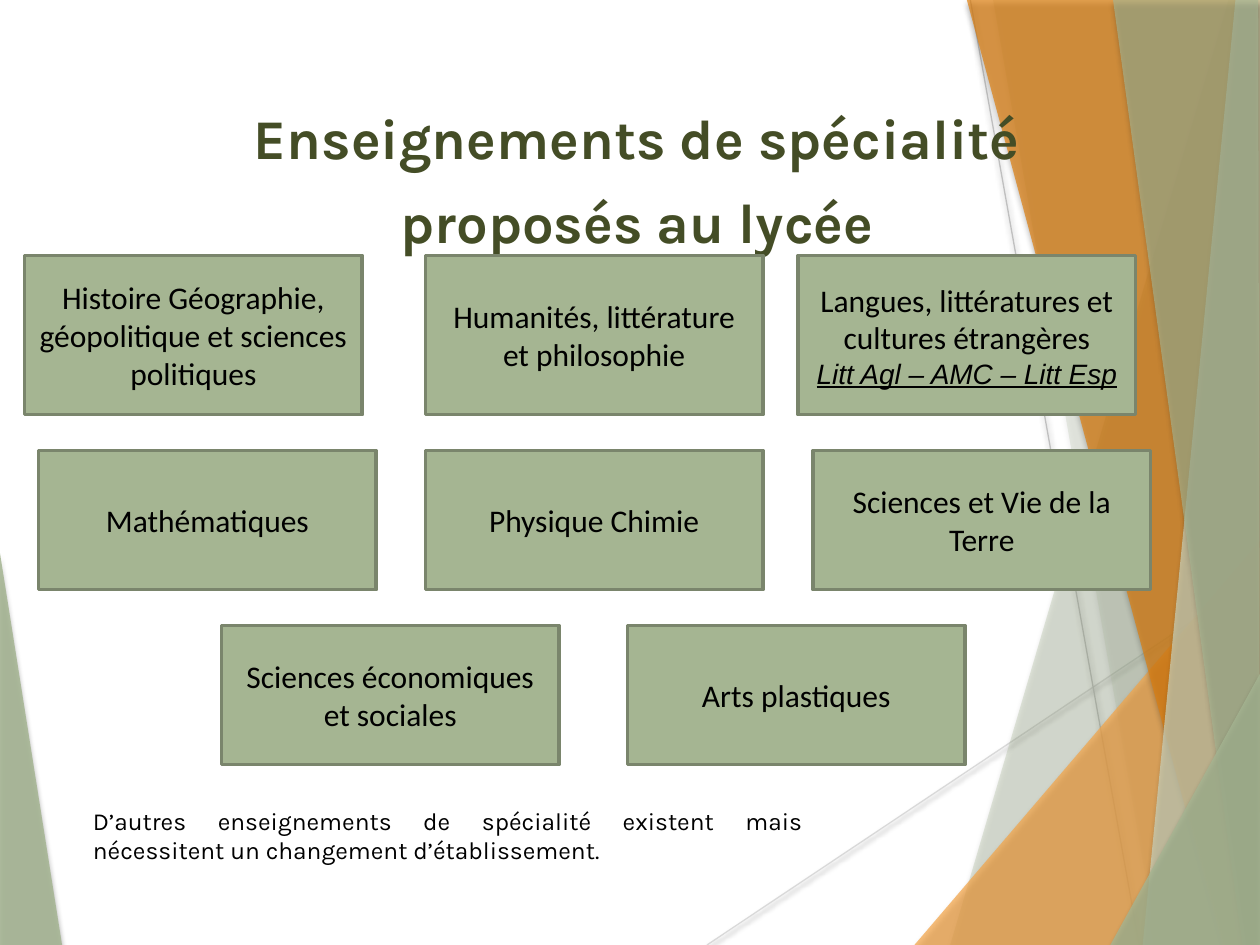
from lxml import etree
from pptx import Presentation
from pptx.dml.color import RGBColor
from pptx.enum import shapes, text
from pptx.oxml import ns
from pptx.util import Pt

SAGE = RGBColor(0xA5, 0xB5, 0x92)
PALE_SAGE = RGBColor(0xC9, 0xD3, 0xBE)
DARK_SAGE = RGBColor(0x7A, 0x85, 0x6C)
APRICOT = RGBColor(0xF3, 0xA4, 0x47)
ORANGE = RGBColor(0xDD, 0x7E, 0x0E)
OLIVE = RGBColor(0x44, 0x4D, 0x26)
LIGHT_GREY = RGBColor(0xD9, 0xD9, 0xD9)
GREY = RGBColor(0xBF, 0xBF, 0xBF)
BLACK = RGBColor(0, 0, 0)

WIDTH, HEIGHT = 720, 540


def add_shadow(shape, opacity, blur, distance):
    """Give the shape a black shadow that falls straight down."""
    effects = etree.SubElement(shape._element.spPr, ns.qn("a:effectLst"))
    shadow = etree.SubElement(effects, ns.qn("a:outerShdw"), blurRad=str(Pt(blur)),
                              dist=str(Pt(distance)), dir="5400000", rotWithShape="0")
    color = etree.SubElement(shadow, ns.qn("a:srgbClr"), val="000000")
    etree.SubElement(color, ns.qn("a:alpha"), val=str(opacity * 1000))


def style_runs(paragraph, name, size, color):
    for span in paragraph.runs:
        span.font.name = name
        span.font.size = Pt(size)
        span.font.color.rgb = color


deck = Presentation()
deck.slide_width, deck.slide_height = Pt(WIDTH), Pt(HEIGHT)
page = deck.slides.add_slide(deck.slide_layouts[5])

# Background lines and translucent facets
for start, end, color in [((404, HEIGHT), (WIDTH, 329), LIGHT_GREY),
                          ((554.5, 0), (651, HEIGHT), GREY)]:
    line = page.shapes.add_connector(shapes.MSO_CONNECTOR.STRAIGHT,
                                     *[Pt(value) for value in start + end])
    line.line.color.rgb = color
    line.line.width = Pt(0.75)
    add_shadow(line, 38, 3.1, 1.6)

facets = [
    (SAGE, 85, [(0, 316), (35.5, HEIGHT), (0, HEIGHT)]),
    (SAGE, 30, [(702, 0), (543, HEIGHT), (WIDTH, HEIGHT), (WIDTH, 0)]),
    (SAGE, 20, [(567.5, 0), (661.5, HEIGHT), (WIDTH, HEIGHT), (WIDTH, 0)]),
    (APRICOT, 72, [(522.5, HEIGHT), (WIDTH, 309), (WIDTH, HEIGHT)]),
    (ORANGE, 70, [(552.5, 0), (698.5, HEIGHT), (WIDTH, HEIGHT), (WIDTH, 0)]),
    (PALE_SAGE, 70, [(706, 0), (653, HEIGHT), (WIDTH, HEIGHT), (WIDTH, 0)]),
    (SAGE, 65, [(636, 0), (710, HEIGHT), (WIDTH, HEIGHT), (719, 0)]),
    (SAGE, 80, [(634.5, HEIGHT), (WIDTH, 385), (WIDTH, HEIGHT)]),
]
for color, opacity, corners in facets:
    points = [(Pt(x), Pt(y)) for x, y in corners]
    builder = page.shapes.build_freeform(*points[0])
    builder.add_line_segments(points[1:], close=True)
    facet = builder.convert_to_shape()
    facet.fill.solid()
    facet.fill.fore_color.rgb = color
    fill_color = facet._element.spPr.find(".//" + ns.qn("a:srgbClr"))
    etree.SubElement(fill_color, ns.qn("a:alpha"), val=str(opacity * 1000))
    facet.line.fill.background()
    add_shadow(facet, 35, 3, 2)

# Title, brought in front of the facets
title = page.shapes.title
page.shapes._spTree.append(title._element)
title.left, title.top, title.width, title.height = Pt(19), Pt(59), Pt(600), Pt(90)
frame = title.text_frame
frame.text = "Enseignements de spécialité\nproposés au lycée"
frame.auto_size = text.MSO_AUTO_SIZE.NONE
frame.vertical_anchor = text.MSO_ANCHOR.TOP
frame.margin_left = frame.margin_right = frame.margin_top = frame.margin_bottom = 0
frame.paragraphs[0]._p.get_or_add_pPr().set("marL", str(Pt(90)))
frame.paragraphs[1].space_before = Pt(10)
for paragraph in frame.paragraphs:
    paragraph.alignment = text.PP_ALIGN.CENTER
    style_runs(paragraph, "Karla", 32, OLIVE)
    paragraph.runs[0].font.bold = True

# Subject boxes: top, height, then left and wording of each box
LANGUAGE_OPTIONS = "Litt Agl – AMC – Litt Esp"
subject_rows = [
    (146, 91, [(14, "Histoire Géographie, géopolitique et sciences politiques"),
               (243, "Humanités, littérature et philosophie"),
               (456, "Langues, littératures et\ncultures étrangères\n" + LANGUAGE_OPTIONS)]),
    (257.5, 79.5, [(22, "Mathématiques"),
                   (243, "Physique Chimie"),
                   (464.5, "Sciences et Vie de la Terre")]),
    (357.5, 79.5, [(126.5, "Sciences économiques\net sociales"),
                   (358.5, "Arts plastiques")]),
]
for top, height, subjects in subject_rows:
    for left, wording in subjects:
        box = page.shapes.add_shape(shapes.MSO_SHAPE.RECTANGLE,
                                    Pt(left), Pt(top), Pt(193), Pt(height))
        box.shadow.inherit = False
        box.fill.solid()
        box.fill.fore_color.rgb = SAGE
        box.line.color.rgb = DARK_SAGE
        box.line.width = Pt(2)
        box.text_frame.text = wording
        box.text_frame.vertical_anchor = text.MSO_ANCHOR.MIDDLE
        for paragraph in box.text_frame.paragraphs:
            paragraph.alignment = text.PP_ALIGN.CENTER
            if paragraph.text == LANGUAGE_OPTIONS:
                style_runs(paragraph, "Arial", 16, BLACK)
                paragraph.runs[0].font.italic = True
                paragraph.runs[0].font.underline = True
            else:
                style_runs(paragraph, "Calibri", 18, BLACK)

# Footnote
note = page.shapes.add_textbox(Pt(46), Pt(457), Pt(420), Pt(40))
note.text_frame.word_wrap = True
note.text_frame.text = ("D’autres enseignements de spécialité existent mais "
                        "nécessitent un changement d’établissement.")
note.text_frame.paragraphs[0].alignment = text.PP_ALIGN.JUSTIFY
style_runs(note.text_frame.paragraphs[0], "Karla", 14, BLACK)

deck.save("out.pptx")
